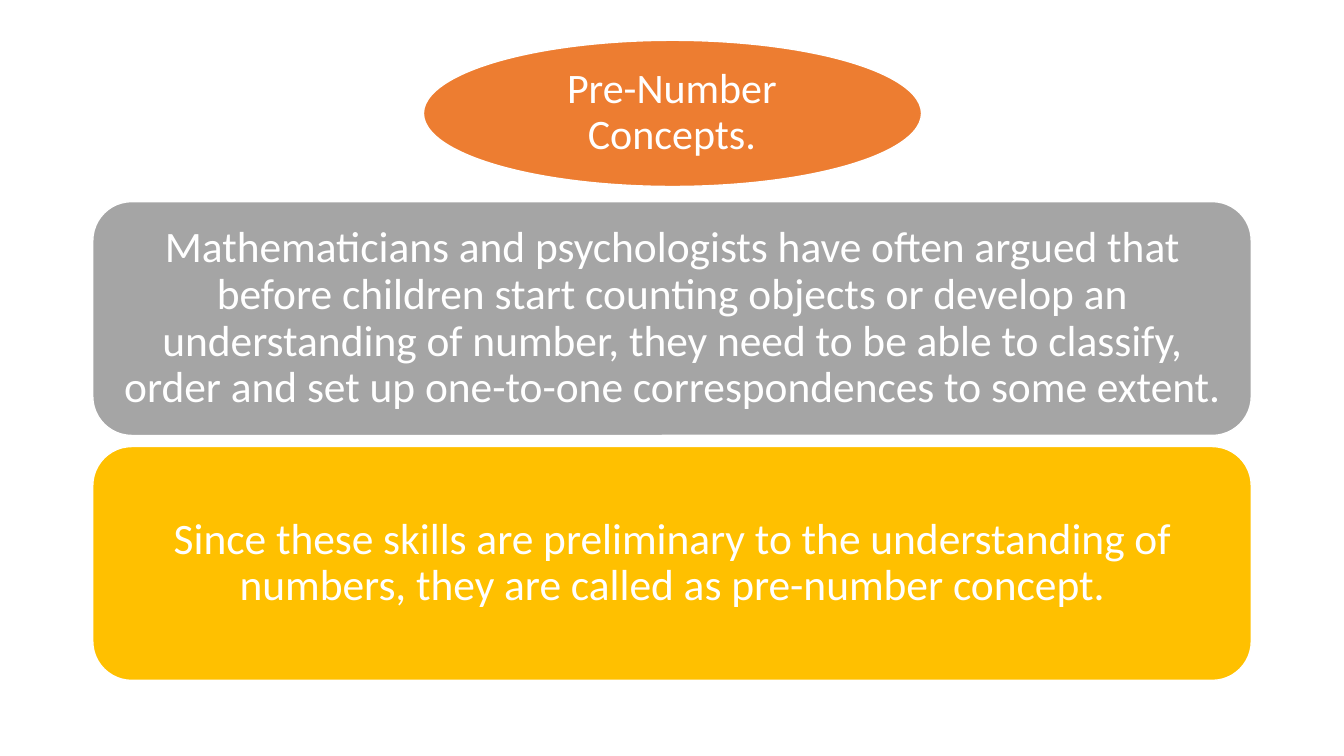
from pptx import Presentation
from pptx.dml.color import RGBColor
from pptx.enum.shapes import MSO_SHAPE
from pptx.enum.text import MSO_ANCHOR, MSO_AUTO_SIZE, PP_ALIGN
from pptx.util import Pt

ELLIPSE = MSO_SHAPE.OVAL
ROUNDED = MSO_SHAPE.ROUNDED_RECTANGLE
MIDDLE = MSO_ANCHOR.MIDDLE
CENTER = PP_ALIGN.CENTER
NO_FIT = MSO_AUTO_SIZE.NONE

WHITE = RGBColor(0xFF, 0xFF, 0xFF)
ORANGE = RGBColor(0xED, 0x7D, 0x31)
GRAY = RGBColor(0xA5, 0xA5, 0xA5)
GOLD = RGBColor(0xFF, 0xC0, 0x00)

PX = 9144
TITLE_LAYOUT = 5
PANEL_LEFT, PANEL_TOP = 92, 200
PANEL_WIDTH, PANEL_HEIGHT = 1149, 232
PANEL_STEP = 243

PANELS = [
    (GRAY, "Mathematicians and psychologists have often argued that before "
           "children start counting objects or develop an understanding of "
           "number, they need to be able to classify, order and set up "
           "one-to-one correspondences to some extent."),
    (GOLD, "Since these skills are preliminary to the understanding of "
           "numbers, they are called as pre-number concept."),
]


class SlideBuilder:
    """Holds the text style and the current slide, and adds its elements."""

    def __init__(self, page, font="Calibri", color=WHITE):
        self.page = page
        self.font = font
        self.color = color

    def shape(self, kind, left, top, width, height, fill):
        box = self.page.shapes.add_shape(
            kind, left * PX, top * PX, width * PX, height * PX)
        box.shadow.inherit = False
        box.fill.solid()
        box.fill.fore_color.rgb = fill
        box.line.color.rgb = WHITE
        box.line.width = Pt(1)
        return box

    def set_text(self, box, text, size, inset_x, inset_y):
        frame = box.text_frame
        frame.text = text
        frame.word_wrap = True
        frame.auto_size = NO_FIT
        frame.vertical_anchor = MIDDLE
        frame.margin_left = frame.margin_right = inset_x * PX
        frame.margin_top = frame.margin_bottom = inset_y * PX
        for para in frame.paragraphs:
            para.alignment = CENTER
            para.line_spacing = 0.9
            for span in para.runs:
                span.font.name = self.font
                span.font.size = Pt(size)
                span.font.color.rgb = self.color

    def title(self, text, left, top, width, height):
        box = self.page.shapes.title
        box.left, box.top = left * PX, top * PX
        box.width, box.height = width * PX, height * PX
        box.element.getparent().append(box.element)
        self.set_text(box, text, 30, 4, 4)

    def panel(self, text, top, fill):
        box = self.shape(ROUNDED, PANEL_LEFT, top, PANEL_WIDTH, PANEL_HEIGHT, fill)
        self.set_text(box, text, 31, 13, 6)


def main():
    deck = Presentation()
    deck.slide_width, deck.slide_height = 1333 * PX, 750 * PX
    page = deck.slides.add_slide(deck.slide_layouts[TITLE_LAYOUT])
    builder = SlideBuilder(page)
    builder.shape(ELLIPSE, 420, 40, 494, 145, ORANGE)
    builder.title("Pre-Number Concepts.", 492, 61, 349, 102)
    for row, (fill, text) in enumerate(PANELS):
        builder.panel(text, PANEL_TOP + row * PANEL_STEP, fill)
    deck.save("out.pptx")


if __name__ == "__main__":
    main()
